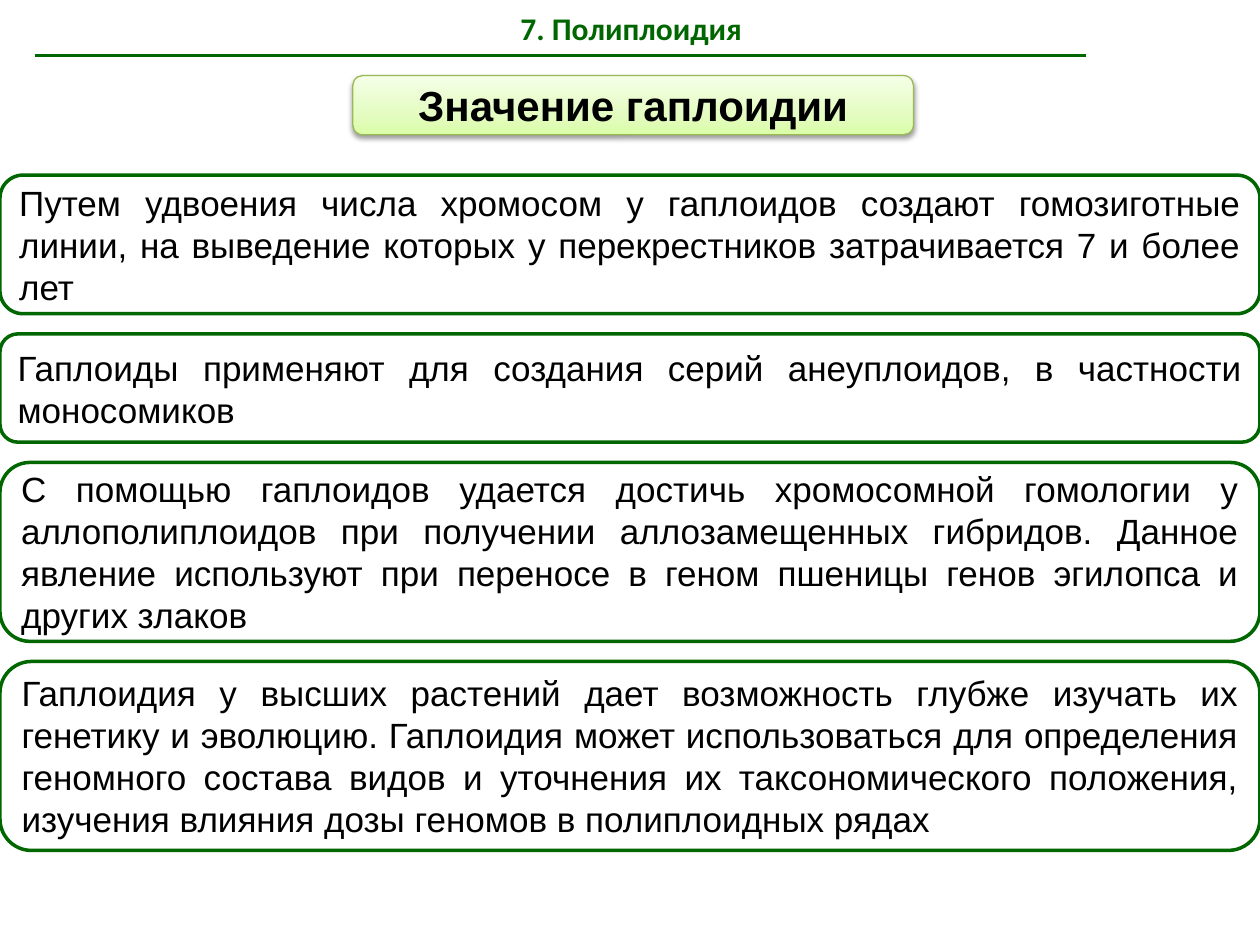
from lxml.etree import SubElement
from pptx import Presentation
from pptx.dml.color import RGBColor
from pptx.enum.shapes import MSO_CONNECTOR, MSO_SHAPE
from pptx.enum.text import MSO_ANCHOR, PP_ALIGN
from pptx.oxml import parse_xml
from pptx.oxml.ns import nsdecls, qn
from pptx.util import Inches, Pt

TITLE = "7. Полиплоидия"
HEADING = "Значение гаплоидии"
STATEMENTS = [
    ("Путем удвоения числа хромосом у гаплоидов создают гомозиготные линии, "
     "на выведение которых у перекрестников затрачивается 7 и более лет", 1.1),
    ("Гаплоиды применяют для создания серий анеуплоидов, в частности моносомиков", 0.86),
    ("С помощью гаплоидов удается достичь хромосомной гомологии у аллополиплоидов "
     "при получении аллозамещенных гибридов. Данное явление используют при переносе "
     "в геном пшеницы генов эгилопса и других злаков", 1.42),
    ("Гаплоидия у высших растений дает возможность глубже изучать их генетику и "
     "эволюцию. Гаплоидия может использоваться для определения геномного состава "
     "видов и уточнения их таксономического положения, изучения влияния дозы геномов "
     "в полиплоидных рядах", 1.5),
]
COLORS = {"green": "006600", "text": "000000", "border": "98B955", "shadow": "000000"}
HEADING_GRADIENT = [(0, "DAFDA7"), (35, "E4FCC2"), (100, "F5FFE7")]
FIRST_TOP = 1.39
GAP = 0.16


def write_text(shape, text, size, font, color, alignment, bold=False):
    frame = shape.text_frame
    frame.word_wrap = True
    frame.vertical_anchor = MSO_ANCHOR.MIDDLE
    paragraph = frame.paragraphs[0]
    paragraph.alignment = alignment
    run = paragraph.add_run()
    run.text = text
    run.font.size = Pt(size)
    run.font.name = font
    run.font.bold = bold
    run.font.color.rgb = RGBColor.from_string(COLORS[color])


def style_line(line, color, width):
    line.color.rgb = RGBColor.from_string(COLORS[color])
    line.width = Pt(width)


def add_box(slide, left, top, width, height, color, line_width):
    box = slide.shapes.add_shape(
        MSO_SHAPE.ROUNDED_RECTANGLE, *map(Inches, (left, top, width, height)))
    box.shadow.inherit = False
    box.fill.background()
    style_line(box.line, color, line_width)
    return box


def add_heading(slide):
    box = add_box(slide, 2.8, 0.6, 4.45, 0.47, "border", 0.75)
    properties = box._element.spPr
    stops = "".join(
        f'<a:gs pos="{position * 1000}"><a:srgbClr val="{color}"/></a:gs>'
        for position, color in HEADING_GRADIENT)
    gradient = parse_xml(
        f'<a:gradFill {nsdecls("a")} rotWithShape="1"><a:gsLst>{stops}</a:gsLst>'
        '<a:lin ang="16200000" scaled="0"/></a:gradFill>')
    properties.replace(properties.find(qn("a:noFill")), gradient)
    shadow = parse_xml(
        f'<a:outerShdw {nsdecls("a")} blurRad="{Pt(3.1)}" dist="{Pt(1.6)}" '
        f'dir="5400000" rotWithShape="0"><a:srgbClr val="{COLORS["shadow"]}">'
        '<a:alpha val="38000"/></a:srgbClr></a:outerShdw>')
    properties.find(qn("a:effectLst")).append(shadow)
    write_text(box, HEADING, 24, "Arial", "text", PP_ALIGN.CENTER, bold=True)


def add_title(slide):
    title = slide.shapes.title
    title.left, title.top, title.width, title.height = map(Inches, (0.51, 0, 9, 0.44))
    write_text(title, TITLE, 18, "Calibri", "green", PP_ALIGN.CENTER, bold=True)


def add_rule(slide):
    rule = slide.shapes.add_connector(
        MSO_CONNECTOR.STRAIGHT, *map(Inches, (0.28, 0.44, 8.62, 0.44)))
    style_line(rule.line, "green", 2)
    SubElement(rule._element.spPr, qn("a:effectLst"))


def main():
    presentation = Presentation()
    presentation.slide_width = Inches(10)
    presentation.slide_height = Inches(7.5)
    slide = presentation.slides.add_slide(presentation.slide_layouts[5])
    add_title(slide)
    add_rule(slide)
    add_heading(slide)
    top = FIRST_TOP
    for text, height in STATEMENTS:
        box = add_box(slide, 0, top, 10, height, "green", 2)
        write_text(box, text, 20, "Arial", "text", PP_ALIGN.JUSTIFY)
        top += height + GAP
    presentation.save("out.pptx")


if __name__ == "__main__":
    main()
